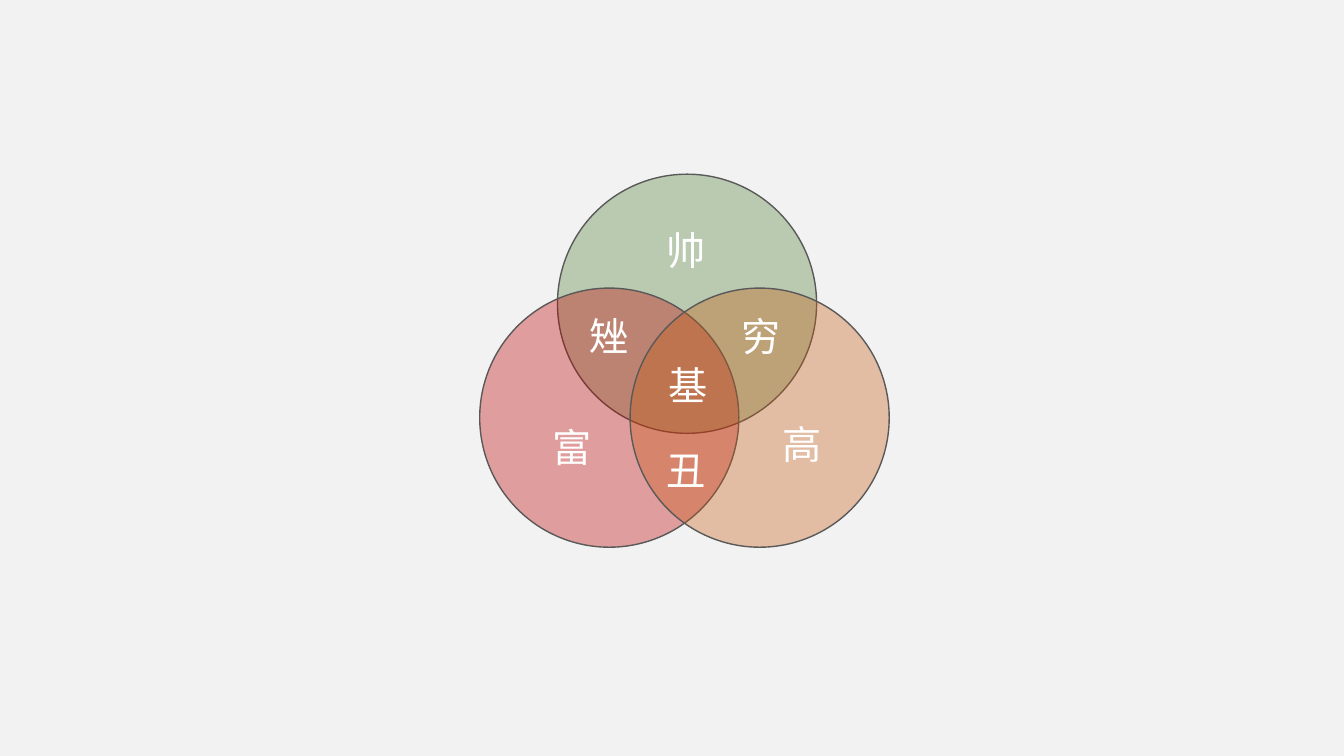
from lxml import etree
from pptx import Presentation
from pptx.dml.color import RGBColor
from pptx.enum.shapes import MSO_SHAPE
from pptx.enum.text import MSO_AUTO_SIZE
from pptx.oxml.ns import qn
from pptx.util import Cm, Pt

OVAL = MSO_SHAPE.OVAL
GROW = MSO_AUTO_SIZE.SHAPE_TO_FIT_TEXT
FONT = "Noto Sans CJK SC"
DIAMETER = 6.53
OPACITY = 35


def paint(color_format, hex_color):
    color_format.rgb = RGBColor.from_string(hex_color)


prs = Presentation()
prs.slide_width, prs.slide_height = Cm(33.87), Cm(19.05)
slide = prs.slides.add_slide(prs.slide_layouts[6])
slide.background.fill.solid()
paint(slide.background.fill.fore_color, "F2F2F2")

trait_circles = [
    (14.05, 4.39, "548235"),
    (12.09, 7.26, "C00000"),
    (15.88, 7.26, "C55A11"),
]
for left, top, color in trait_circles:
    circle = slide.shapes.add_shape(OVAL, Cm(left), Cm(top), Cm(DIAMETER), Cm(DIAMETER))
    circle.shadow.inherit = False
    circle.fill.solid()
    paint(circle.fill.fore_color, color)
    fill_color = circle.fill._xPr.find(qn("a:solidFill"))[0]
    etree.SubElement(fill_color, qn("a:alpha"), val=str(OPACITY * 1000))
    paint(circle.line.color, "595959")
    circle.line.width = Pt(1)

labels = [
    ("帅", 16.54, 5.59),
    ("富", 13.67, 10.54),
    ("高", 19.46, 10.46),
    ("矬", 14.61, 7.75),
    ("穷", 18.44, 7.75),
    ("丑", 16.54, 11.13),
    ("基", 16.59, 8.99),
]
for word, left, top in labels:
    label = slide.shapes.add_textbox(Cm(left), Cm(top), Cm(1.5), Cm(1.45))
    frame = label.text_frame
    frame.word_wrap = False
    frame.auto_size = GROW
    paragraph = frame.paragraphs[0]
    paragraph.text = word
    paragraph.font.size = Pt(28)
    paragraph.font.name = FONT
    paint(paragraph.font.color, "FFFFFF")
    etree.SubElement(paragraph.font._rPr, qn("a:ea"), typeface=FONT)

prs.save("out.pptx")
